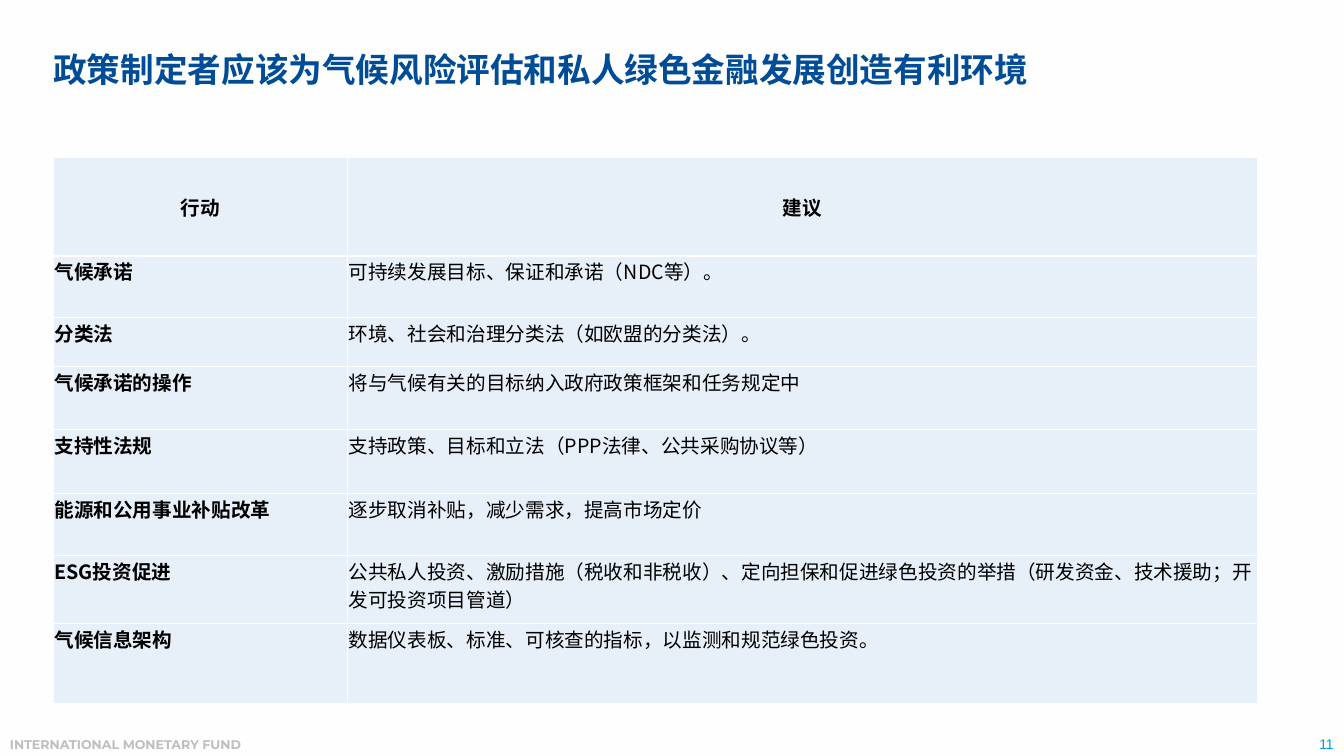
from dataclasses import dataclass
from typing import Any

from lxml.etree import SubElement
from pptx import Presentation
from pptx.dml.color import RGBColor
from pptx.enum.text import MSO_ANCHOR, PP_ALIGN
from pptx.oxml import parse_xml
from pptx.oxml.ns import nsdecls, qn
from pptx.util import Pt

CJK = "Noto Sans CJK SC"
BACKGROUND = "FEFEFE"
CELL_FILL = "E7EFF9"


@dataclass
class Style:
    size: float
    color: str
    name: str = CJK
    bold: bool = False
    align: PP_ALIGN = PP_ALIGN.LEFT
    anchor: MSO_ANCHOR = MSO_ANCHOR.TOP


@dataclass
class FooterLabel:
    text: str
    left: float
    top: float
    width: float
    height: float
    style: Style


@dataclass
class PolicyRow:
    action: str
    advice: str
    height: float


HEADING = Style(24, "004C97", bold=True, anchor=MSO_ANCHOR.MIDDLE)
COLUMN_HEAD = Style(14, "000000", bold=True, align=PP_ALIGN.CENTER, anchor=MSO_ANCHOR.MIDDLE)
ACTION = Style(14, "000000", bold=True)
ADVICE = Style(14, "000000")

FOOTER = [
    FooterLabel("INTERNATIONAL MONETARY FUND", 0, 522.72, 720, 18,
                Style(9, "BEBEBE", "Montserrat", bold=True)),
    FooterLabel("11", 864.72, 521.28, 95.04, 19.44,
                Style(10, "009CDE", "Arial", align=PP_ALIGN.RIGHT, anchor=MSO_ANCHOR.BOTTOM)),
]

COLUMN_WIDTHS = [210.24, 649.6]
POLICIES = [
    PolicyRow("行动", "建议", 70.56),
    PolicyRow("气候承诺", "可持续发展目标、保证和承诺（NDC等）。", 43.92),
    PolicyRow("分类法", "环境、社会和治理分类法（如欧盟的分类法）。", 35.28),
    PolicyRow("气候承诺的操作", "将与气候有关的目标纳入政府政策框架和任务规定中", 44.64),
    PolicyRow("支持性法规", "支持政策、目标和立法（PPP法律、公共采购协议等）", 46.08),
    PolicyRow("能源和公用事业补贴改革", "逐步取消补贴，减少需求，提高市场定价", 43.92),
    PolicyRow("ESG投资促进",
              "公共私人投资、激励措施（税收和非税收）、定向担保和促进绿色投资的举措"
              "（研发资金、技术援助；开发可投资项目管道）", 48.96),
    PolicyRow("气候信息架构", "数据仪表板、标准、可核查的指标，以监测和规范绿色投资。", 56.88),
]


def rgb(color: str) -> RGBColor:
    return RGBColor.from_string(color)


def apply(target: Any, values: dict[str, Any]) -> None:
    for key, value in values.items():
        setattr(target, key, value)


def write(frame: Any, text: str, style: Style) -> None:
    paragraph = frame.paragraphs[0]
    paragraph.alignment = style.align
    run = paragraph.add_run()
    run.text = text
    apply(run.font, {"size": Pt(style.size), "bold": style.bold, "name": style.name})
    run.font.color.rgb = rgb(style.color)
    SubElement(run.font._element, qn("a:ea"), typeface=style.name)


def add_borders(cell: Any) -> None:
    properties = cell._tc.get_or_add_tcPr()
    for index, side in enumerate("LRTB"):
        properties.insert(index, parse_xml(
            f'<a:ln{side} {nsdecls("a")} w="12700"><a:solidFill>'
            f'<a:srgbClr val="{BACKGROUND}"/></a:solidFill></a:ln{side}>'))


def fill_cell(cell: Any, text: str, style: Style) -> None:
    write(cell.text_frame, text, style)
    apply(cell, {"vertical_anchor": style.anchor, "margin_left": Pt(0.72),
                 "margin_right": Pt(0.72), "margin_top": Pt(0.72), "margin_bottom": 0})
    cell.fill.solid()
    cell.fill.fore_color.rgb = rgb(CELL_FILL)
    add_borders(cell)


def add_title(slide: Any, text: str) -> None:
    title = slide.shapes.title
    apply(title, {"left": Pt(38.16), "top": 0, "width": Pt(890.64), "height": Pt(102.96)})
    frame = title.text_frame
    apply(frame, {"margin_left": 0, "margin_right": 0, "margin_top": 0, "margin_bottom": 0,
                  "vertical_anchor": HEADING.anchor, "word_wrap": True})
    write(frame, text, HEADING)
    frame.paragraphs[0].line_spacing = 0.9


def add_policy_table(slide: Any) -> None:
    table = slide.shapes.add_table(
        len(POLICIES), len(COLUMN_WIDTHS), Pt(38.16), Pt(112.32),
        Pt(sum(COLUMN_WIDTHS)), Pt(sum(policy.height for policy in POLICIES))).table
    for column, width in zip(table.columns, COLUMN_WIDTHS):
        column.width = Pt(width)
    for index, (row, policy) in enumerate(zip(table.rows, POLICIES)):
        row.height = Pt(policy.height)
        styles = (ACTION, ADVICE) if index else (COLUMN_HEAD, COLUMN_HEAD)
        for cell, text, style in zip(row.cells, (policy.action, policy.advice), styles):
            fill_cell(cell, text, style)


def add_footer_label(slide: Any, label: FooterLabel) -> None:
    frame = slide.shapes.add_textbox(
        Pt(label.left), Pt(label.top), Pt(label.width), Pt(label.height)).text_frame
    apply(frame, {"word_wrap": True, "vertical_anchor": label.style.anchor})
    write(frame, label.text, label.style)


def main() -> None:
    deck = Presentation()
    apply(deck, {"slide_width": Pt(960), "slide_height": Pt(540)})
    slide = deck.slides.add_slide(deck.slide_layouts.get_by_name("Title Only"))
    slide.background.fill.solid()
    slide.background.fill.fore_color.rgb = rgb(BACKGROUND)

    # Footer
    for label in FOOTER:
        add_footer_label(slide, label)

    # Title and policy table
    add_title(slide, "政策制定者应该为气候风险评估和私人绿色金融发展创造有利环境")
    add_policy_table(slide)

    deck.save("out.pptx")


if __name__ == "__main__":
    main()
